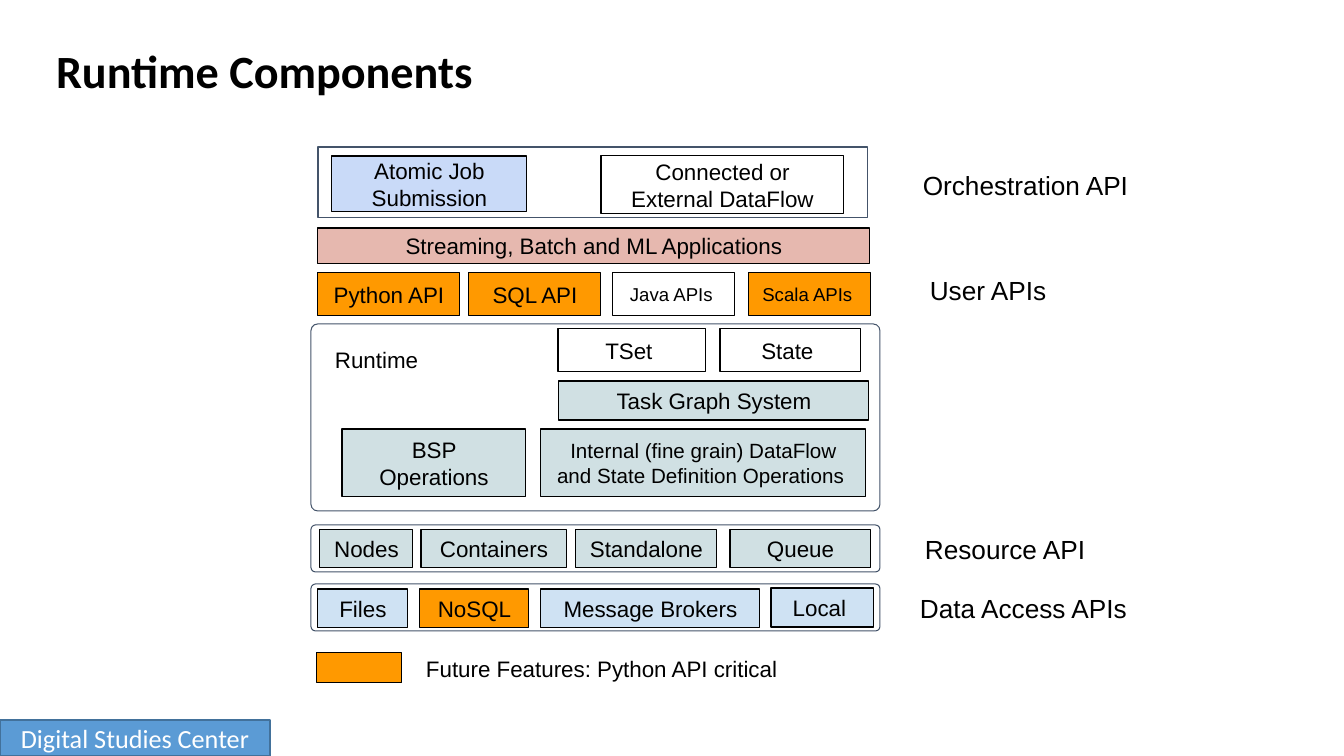
import pptx
import pptx.util
import pptx.dml.color
import pptx.enum.shapes
import pptx.enum.text

PX = 914400 / 100.8
SHAPE = pptx.enum.shapes.MSO_SHAPE
ALIGN = pptx.enum.text.PP_ALIGN
ANCHOR = pptx.enum.text.MSO_ANCHOR
COLORS = {
    "black": "000000", "white": "FFFFFF", "slate": "44546A",
    "teal": "D0E0E3", "sky": "CFE2F3", "periwinkle": "C9DAF8",
    "rose": "E6B8AF", "orange": "FF9900",
    "footer": "5B9BD5", "footer line": "42719B",
}


def rgb(name):
    return pptx.dml.color.RGBColor.from_string(COLORS[name])


def put(kind, box, text="", size=16, fill=None, line="black", color="black",
        font="Arial", align=ALIGN.CENTER, anchor=ANCHOR.MIDDLE, inset=13, width=0.75):
    """Place a shape, or a plain text box when kind is None."""
    place = [round(v * PX) for v in box]
    if kind is None:
        part = slide.shapes.add_textbox(*place)
    else:
        part = slide.shapes.add_shape(kind, *place)
        part.shadow.inherit = False
        part.line.color.rgb = rgb(line)
        part.line.width = pptx.util.Pt(width)
        if fill:
            part.fill.solid()
            part.fill.fore_color.rgb = rgb(fill)
        else:
            part.fill.background()
    if text:
        frame = part.text_frame
        frame.word_wrap = True
        frame.vertical_anchor = anchor
        frame.margin_left = frame.margin_right = round(inset * PX)
        frame.margin_top = frame.margin_bottom = round(inset * PX)
        paragraph = frame.paragraphs[0]
        paragraph.alignment = align
        run = paragraph.add_run()
        run.text = text
        run.font.size = pptx.util.Pt(size)
        run.font.name = font
        run.font.color.rgb = rgb(color)
    return part


deck = pptx.Presentation()
deck.slide_width = round(1344 * PX)
deck.slide_height = round(756 * PX)
slide = deck.slides.add_slide(deck.slide_layouts[5])

# Title
title = slide.shapes.title
title.left, title.top, title.width, title.height = [round(v * PX) for v in (43, 36, 1252, 85)]
heading = title.text_frame
heading.auto_size = pptx.enum.text.MSO_AUTO_SIZE.NONE
heading.vertical_anchor = ANCHOR.TOP
heading.margin_left = heading.margin_right = round(13 * PX)
heading.margin_top = heading.margin_bottom = round(13 * PX)
heading.paragraphs[0].alignment = ALIGN.LEFT
heading.paragraphs[0].line_spacing = 0.9
heading_run = heading.paragraphs[0].add_run()
heading_run.text = "Runtime Components"
heading_run.font.size = pptx.util.Pt(33)
heading_run.font.name = "Calibri"
heading_run.font.bold = True
heading_run.font.color.rgb = rgb("black")

# Footer bar
put(SHAPE.RECTANGLE, (0, 720, 270, 36), "Digital Studies Center", 18.7, "footer",
    "footer line", "white", "Calibri", inset=5, width=1)

# Layer frames
put(SHAPE.RECTANGLE, (318, 147, 550, 71), fill="white", line="slate")
for top, height, corner in [(324, 187, 0.036), (525, 47, 0.096), (584, 47, 0.096)]:
    layer = put(SHAPE.ROUNDED_RECTANGLE, (311, top, 569, height), line="slate")
    layer.adjustments[0] = corner

# Components by row: top, height, then (left, width, text, size, fill)
rows = [
    (156, 56, [(332, 195, "Atomic Job Submission", 16, "periwinkle")]),
    (156, 58, [(601, 243, "Connected or External DataFlow", 16, None)]),
    (228, 36, [(318, 552, "Streaming, Batch and ML Applications", 16, "rose")]),
    (273, 43, [(318, 142, "Python API", 16, "orange"),
               (469, 132, "SQL API", 16, "orange"),
               (613, 122, "Java APIs ", 13.3, "white"),
               (749, 122, "Scala APIs ", 13.3, "orange")]),
    (329, 43, [(558, 148, "TSet ", 16, "white"),
               (720, 141, "State ", 16, "white")]),
    (381, 39, [(559, 310, "Task Graph System", 16, "teal")]),
    (429, 68, [(342, 184, "BSP Operations", 16, "teal"),
               (541, 325, "Internal (fine grain) DataFlow and State Definition Operations ",
                14.7, "teal")]),
    (530, 38, [(320, 93, "Nodes", 16, "teal"),
               (421, 146, "Containers", 16, "teal"),
               (576, 141, "Standalone", 16, "teal"),
               (730, 141, "Queue", 16, "teal")]),
    (589, 39, [(318, 90, "Files", 16, "sky"),
               (420, 109, "NoSQL", 16, "orange"),
               (541, 219, "Message Brokers", 16, "sky")]),
    (588, 39, [(771, 103, "Local ", 16, "sky")]),
    (653, 30, [(317, 85, "", 16, "orange")]),
]
for top, height, components in rows:
    for left, width, text, size, fill in components:
        put(SHAPE.RECTANGLE, (left, top, width, height), text, size, fill)

# Centred labels of the API levels
for box, text in [((876, 157, 299, 57), "Orchestration API"),
                  ((855, 264, 266, 52), "User APIs"),
                  ((907, 510, 196, 78), "Resource API")]:
    put(None, box, text, 18.7)

# Left-aligned labels
for box, text, size in [((907, 579, 237, 27), "Data Access APIs", 18.7),
                        ((322, 333, 237, 27), "Runtime", 16),
                        ((413, 642, 531, 47), "Future Features: Python API critical", 16)]:
    put(None, box, text, size, align=ALIGN.LEFT, anchor=ANCHOR.TOP)

deck.save("out.pptx")
